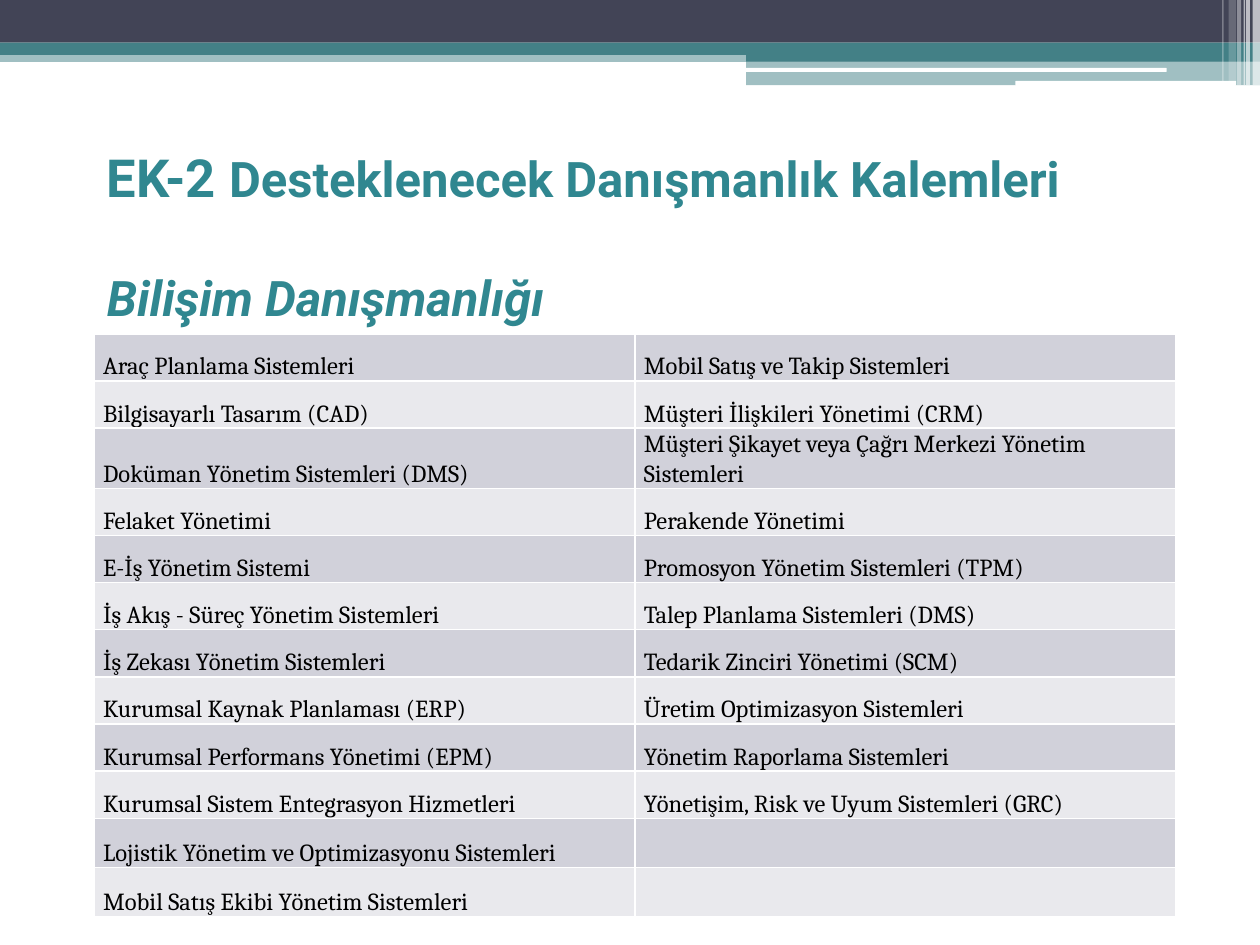
from copy import deepcopy

from lxml.etree import SubElement
from pptx import Presentation
from pptx.dml.color import RGBColor
from pptx.enum.shapes import MSO_SHAPE
from pptx.enum.text import MSO_ANCHOR, MSO_AUTO_SIZE, PP_ALIGN
from pptx.oxml import parse_xml
from pptx.oxml.ns import nsdecls, qn
from pptx.util import Cm, Pt

NAVY = RGBColor(0x42, 0x44, 0x56)
TEAL = RGBColor(0x43, 0x80, 0x86)
TITLE_TEAL = RGBColor(0x30, 0x87, 0x90)
WHITE = RGBColor(0xFF, 0xFF, 0xFF)
BLACK = RGBColor(0, 0, 0)
ROW_FILLS = (RGBColor(0xD1, 0xD1, 0xDA), RGBColor(0xE9, 0xE9, 0xED))

LEFT_ITEMS = (
    "Araç Planlama Sistemleri",
    "Bilgisayarlı Tasarım (CAD)",
    "Doküman Yönetim Sistemleri (DMS)",
    "Felaket Yönetimi",
    "E-İş Yönetim Sistemi",
    "İş Akış - Süreç Yönetim Sistemleri",
    "İş Zekası Yönetim Sistemleri",
    "Kurumsal Kaynak Planlaması (ERP)",
    "Kurumsal Performans Yönetimi (EPM)",
    "Kurumsal Sistem Entegrasyon Hizmetleri",
    "Lojistik Yönetim ve Optimizasyonu Sistemleri",
    "Mobil Satış Ekibi Yönetim Sistemleri",
)
RIGHT_ITEMS = (
    "Mobil Satış ve Takip Sistemleri",
    "Müşteri İlişkileri Yönetimi (CRM)",
    "Müşteri Şikayet veya Çağrı Merkezi Yönetim Sistemleri",
    "Perakende Yönetimi",
    "Promosyon Yönetim Sistemleri (TPM)",
    "Talep Planlama Sistemleri (DMS)",
    "Tedarik Zinciri Yönetimi (SCM)",
    "Üretim Optimizasyon Sistemleri",
    "Yönetim Raporlama Sistemleri",
    "Yönetişim, Risk ve Uyum Sistemleri (GRC)",
    "",
    "",
)


def add_block(slide, box, color, opacity=100, kind=MSO_SHAPE.RECTANGLE):
    """Add a borderless filled shape at a box given in centimetres."""
    shape = slide.shapes.add_shape(kind, *(Cm(length) for length in box))
    shape.shadow.inherit = False
    shape.line.fill.background()
    shape.fill.solid()
    shape.fill.fore_color.rgb = color
    if opacity < 100:
        color_element = shape.fill._xPr.find(".//" + qn("a:srgbClr"))
        SubElement(color_element, qn("a:alpha"), val=str(opacity * 1000))


def add_header(slide, left, top, width):
    """Draw the header bands, the stepped tab and the stripes on the right."""
    right = left + width
    tab_left = right - 10.36
    add_block(slide, (left, top + 1.02, width, 0.23), TEAL, 50)
    add_block(slide, (left, top, width, 0.86), NAVY)
    add_block(slide, (left, top + 0.86, width, 0.25), TEAL)
    add_block(slide, (tab_left, top + 0.99, 10.36, 0.25), TEAL)
    add_block(slide, (tab_left, top + 1.23, 10.36, 0.49), TEAL, 50)
    for inset, drop, length, height in ((10.39, 1.37, 8.51, 0.08), (4.93, 1.63, 4.45, 0.1)):
        box = (right - inset, top + drop, length, height)
        add_block(slide, box, WHITE, kind=MSO_SHAPE.ROUNDED_RECTANGLE)
    stripes = (
        (0.15, 0.15, 1.72, 65),
        (0.28, 0.08, 1.72, 65),
        (0.33, 0.03, 1.72, 60),
        (0.46, 0.08, 1.72, 40),
        (0.63, 0.15, 1.63, 20),
        (0.76, 0.03, 1.63, 30),
    )
    for inset, stripe_width, height, opacity in stripes:
        add_block(slide, (right - inset, top, stripe_width, height), WHITE, opacity)


def add_title_run(paragraph, text, size, italic=False):
    """Append one bold title run and return it."""
    run = paragraph.add_run()
    run.text = text
    run.font.name = "Roboto"
    run.font.size = Pt(size)
    run.font.bold = True
    run.font.italic = italic
    run.font.color.rgb = TITLE_TEAL
    return run


def format_title(slide, left, top, width, height):
    """Place the title placeholder and fill in its heading and subheading."""
    title = slide.shapes.title
    title.left, title.top, title.width, title.height = (
        Cm(length) for length in (left, top, width, height)
    )
    title.fill.solid()
    title.fill.fore_color.rgb = WHITE
    title.line.color.rgb = WHITE
    title.line.width = Pt(0.75)
    frame = title.text_frame
    frame.word_wrap = True
    frame.auto_size = MSO_AUTO_SIZE.NONE
    frame.vertical_anchor = MSO_ANCHOR.BOTTOM
    paragraph = frame.paragraphs[0]
    paragraph.alignment = PP_ALIGN.LEFT
    add_title_run(paragraph, "EK-2 ", 30)
    heading = add_title_run(paragraph, "Desteklenecek Danışmanlık Kalemleri ", 28)
    paragraph.add_line_break()
    paragraph.add_line_break()
    for line_break in paragraph._p.findall(qn("a:br")):
        line_break.insert(0, deepcopy(heading._r.rPr))
    add_title_run(paragraph, "Bilişim Danışmanlığı", 28, italic=True)


def format_cell(cell, text, fill_color):
    """Fill one cell, give it white borders and write its text."""
    cell.fill.solid()
    cell.fill.fore_color.rgb = fill_color
    cell.vertical_anchor = MSO_ANCHOR.BOTTOM
    cell.margin_left = cell.margin_right = Cm(0.18)
    cell.margin_top = cell.margin_bottom = 0
    for index, side in enumerate(("lnL", "lnR", "lnT", "lnB")):
        border = parse_xml(
            f'<a:{side} {nsdecls("a")} w="12700"><a:solidFill>'
            f'<a:srgbClr val="{WHITE}"/></a:solidFill></a:{side}>'
        )
        cell._tc.tcPr.insert(index, border)
    if text:
        paragraph = cell.text_frame.paragraphs[0]
        paragraph.line_spacing = 1.07
        paragraph.space_after = Pt(8)
        run = paragraph.add_run()
        run.text = text
        run.font.name = "Cambria"
        run.font.size = Pt(14)
        run.font.color.rgb = BLACK


def add_consulting_table(slide, left, top, width):
    """Add the two-column table of consulting items."""
    rows = list(zip(LEFT_ITEMS, RIGHT_ITEMS))
    row_heights = [Cm(0.95 if right_item else 0.99) for _, right_item in rows]
    table = slide.shapes.add_table(
        len(rows), 2, Cm(left), Cm(top), Cm(width), sum(row_heights)
    ).table
    table.first_row = False
    for row_index, items in enumerate(rows):
        table.rows[row_index].height = row_heights[row_index]
        for column_index, text in enumerate(items):
            cell = table.cell(row_index, column_index)
            format_cell(cell, text, ROW_FILLS[row_index % 2])


def main():
    """Build and save the presentation."""
    presentation = Presentation()
    presentation.slide_width = Cm(25.4)
    presentation.slide_height = Cm(19.05)
    slide = presentation.slides.add_slide(presentation.slide_layouts[5])
    add_header(slide, 0, 0, 25.4)
    format_title(slide, 1.9, 2.92, 21.6, 3.78)
    add_consulting_table(slide, 1.9, 6.73, 21.8)
    presentation.save("out.pptx")


if __name__ == "__main__":
    main()
